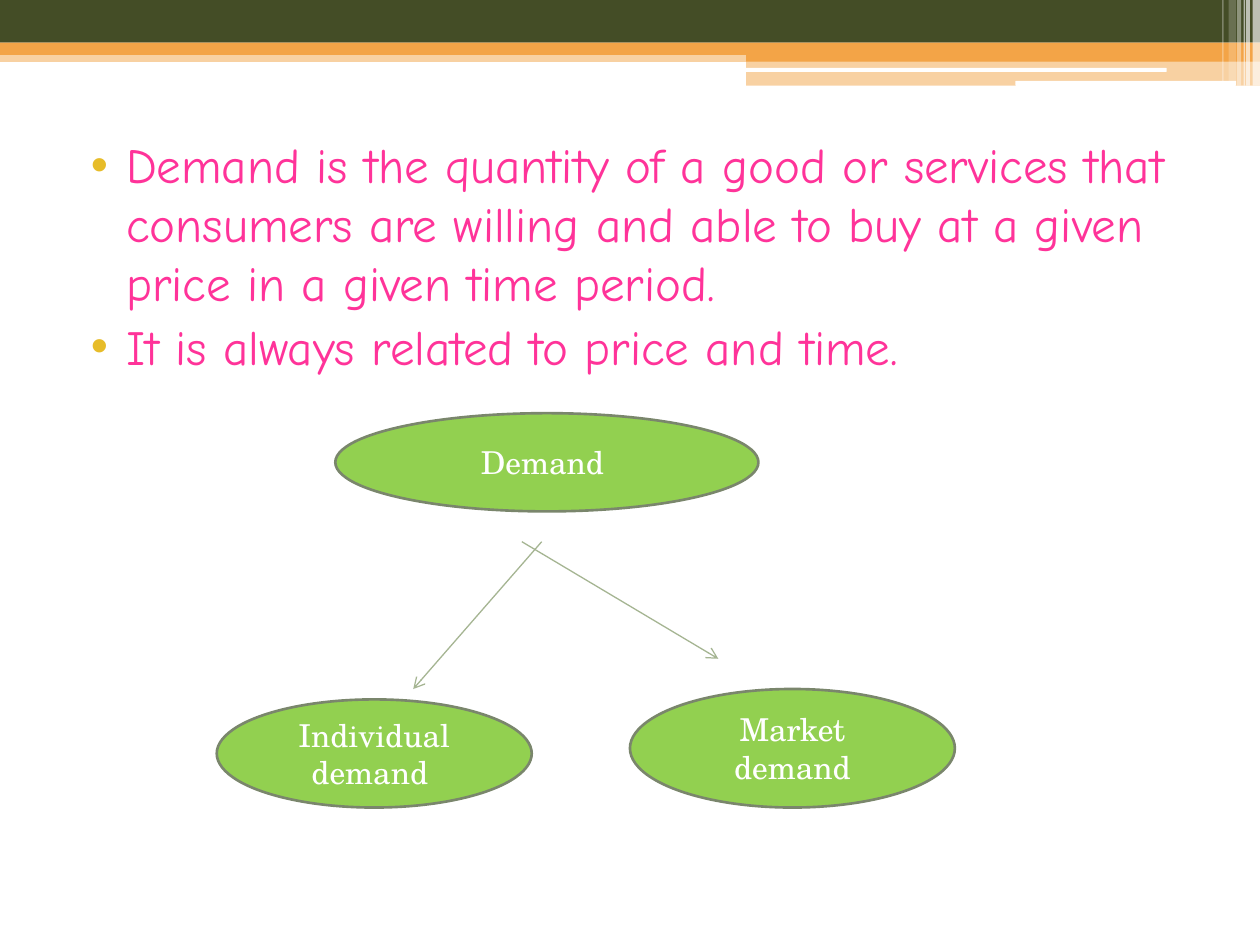
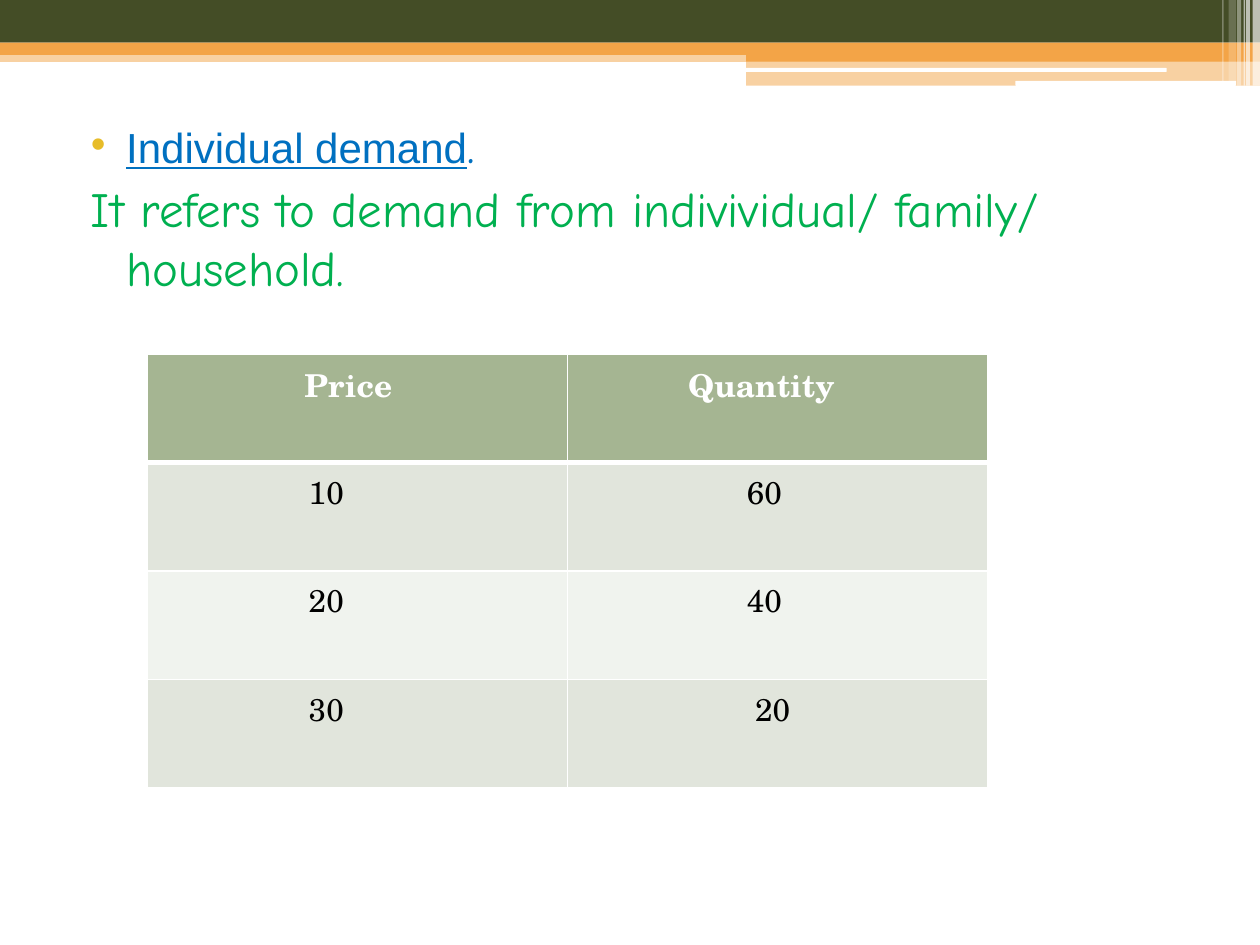
from lxml.etree import SubElement
from pptx import Presentation
from pptx.dml.color import RGBColor
from pptx.enum.shapes import MSO_CONNECTOR, MSO_SHAPE
from pptx.enum.text import MSO_ANCHOR, PP_ALIGN
from pptx.oxml.ns import qn
from pptx.util import Cm, Pt

COLORS = {
    "olive": "444D26", "orange": "F3A447", "white": "FFFFFF", "black": "000000",
    "bullet": "E7BC29", "pink": "FF3399", "blue": "0070C0", "green": "00B050",
    "lime": "92D050", "outline": "7A866C", "sage": "A5B592",
    "row_dark": "E1E5DC", "row_light": "F0F3EE",
}
HAND, SERIF, SANS = "Comic Neue", "TeX Gyre Schola", "Arial"
SLIDE_W, SLIDE_H = 25.4, 19.05
CONTENT_LAYOUT = 1
HANGING = 0.71


def rgb(name):
    return RGBColor.from_string(COLORS[name])


def add_text(p, text, font=SERIF, size=18, color="white", bold=False, underline=False):
    r = p.add_run()
    r.text = text
    r.font.name, r.font.size = font, Pt(size)
    r.font.bold, r.font.underline = bold, underline
    r.font.color.rgb = rgb(color)


def add_filled(slide, kind, box, color, alpha=100):
    sp = slide.shapes.add_shape(kind, *map(Cm, box))
    sp.shadow.inherit = False
    sp.fill.solid()
    sp.fill.fore_color.rgb = rgb(color)
    sp.line.fill.background()
    if alpha < 100:
        clr = sp.fill._xPr.find(f"{qn('a:solidFill')}/{qn('a:srgbClr')}")
        SubElement(clr, qn("a:alpha"), val=str(alpha * 1000))
    return sp


def draw_header(slide, width=SLIDE_W):
    """Draw the top bands, their white slits and the fading stripes at the right."""
    wing = 10.36
    for left, top, height, color, alpha in (
        (0, 1.02, 0.23, "orange", 50),
        (0, 0, 0.86, "olive", 100),
        (0, 0.86, 0.25, "orange", 100),
        (width - wing, 0.99, 0.25, "orange", 100),
        (width - wing, 1.22, 0.51, "orange", 50),
    ):
        box = (left, top, width - left, height)
        add_filled(slide, MSO_SHAPE.RECTANGLE, box, color, alpha)
    for slit in ((width - 10.39, 1.37, 8.51, 0.08), (width - 4.93, 1.63, 4.45, 0.1)):
        add_filled(slide, MSO_SHAPE.ROUNDED_RECTANGLE, slit, "white")
    for from_right, stripe_w, height, alpha in (
        (0.15, 0.15, 1.73, 65), (0.28, 0.08, 1.73, 65), (0.33, 0.03, 1.73, 60),
        (0.46, 0.08, 1.73, 40), (0.63, 0.15, 1.63, 20), (0.76, 0.03, 1.63, 30),
    ):
        box = (width - from_right, 0, stripe_w, height)
        add_filled(slide, MSO_SHAPE.RECTANGLE, box, "white", alpha)


def format_item(p, bullet):
    """Give a paragraph its hanging indent, with or without a bullet."""
    p.space_before = Pt(3)
    pPr = p._p.get_or_add_pPr()
    pPr.set("marL", str(Cm(1.02)))
    pPr.set("indent", str(-Cm(HANGING)))
    if bullet:
        clr = SubElement(pPr, qn("a:buClr"))
        SubElement(clr, qn("a:srgbClr"), val=COLORS["bullet"])
        SubElement(pPr, qn("a:buFont"), typeface=SANS)
        SubElement(pPr, qn("a:buChar"), char="•")
    else:
        SubElement(pPr, qn("a:buNone"))


def fill_body(slide, box, items):
    """Fill the body with items, each a bullet flag and its (text, format) runs."""
    body = slide.placeholders[1]
    body.left, body.top, body.width, body.height = map(Cm, box)
    tf = body.text_frame
    tf.word_wrap = True
    tf.vertical_anchor = MSO_ANCHOR.TOP
    for i, (bullet, runs) in enumerate(items):
        p = tf.add_paragraph() if i else tf.paragraphs[0]
        format_item(p, bullet)
        for text, style in runs:
            add_text(p, text, **style)


def add_ellipse(slide, box, text):
    sp = add_filled(slide, MSO_SHAPE.OVAL, box, "lime")
    sp.line.color.rgb = rgb("outline")
    sp.line.width = Pt(1.5)
    tf = sp.text_frame
    tf.word_wrap = True
    tf.vertical_anchor = MSO_ANCHOR.MIDDLE
    p = tf.paragraphs[0]
    p.alignment = PP_ALIGN.CENTER
    add_text(p, text)


def add_arrow(slide, x1, y1, x2, y2):
    line = slide.shapes.add_connector(MSO_CONNECTOR.STRAIGHT, *map(Cm, (x1, y1, x2, y2)))
    line.line.color.rgb = rgb("sage")
    line.line.width = Pt(0.75)
    SubElement(line.line._get_or_add_ln(), qn("a:tailEnd"), type="arrow")
    SubElement(line._element.spPr, qn("a:effectLst"))


def draw_demand_tree(slide, left, top):
    for x, y, w, h, text in (
        (2.39, 0, 8.53, 1.98, "Demand "),
        (0, 5.77, 6.35, 2.18, "Individual demand "),
        (8.33, 5.56, 6.55, 2.39, "Market demand"),
    ):
        add_ellipse(slide, (left + x, top + y, w, h), text)
    for x1, y1, x2, y2 in ((6.55, 2.59, 3.96, 5.56), (6.15, 2.59, 10.11, 4.95)):
        add_arrow(slide, left + x1, top + y1, left + x2, top + y2)


def set_borders(cell, **widths):
    """Draw white cell borders; widths in points by side (L, R, T, B)."""
    tcPr = cell._tc.get_or_add_tcPr()
    for side, width in widths.items():
        ln = SubElement(tcPr, qn(f"a:ln{side}"), w=str(Pt(width)))
        fill = SubElement(ln, qn("a:solidFill"))
        SubElement(fill, qn("a:srgbClr"), val=COLORS["white"])


def draw_schedule(slide, box, rows):
    """Draw the demand table; each cell is a text and its left indent."""
    table = slide.shapes.add_table(len(rows), len(rows[0]), *map(Cm, box)).table
    for i, row in enumerate(rows):
        header = i == 0
        fill = "sage" if header else ("row_light", "row_dark")[i % 2]
        for j, (text, indent) in enumerate(row):
            cell = table.cell(i, j)
            set_borders(cell, L=1, R=1, T=3 if i == 1 else 1, B=3 if header else 1)
            cell.fill.solid()
            cell.fill.fore_color.rgb = rgb(fill)
            p = cell.text_frame.paragraphs[0]
            p._p.get_or_add_pPr().set("marL", str(Cm(indent)))
            add_text(p, text, color="white" if header else "black", bold=header)


def new_slide(prs):
    slide = prs.slides.add_slide(prs.slide_layouts[CONTENT_LAYOUT])
    title = slide.shapes.title._element
    title.getparent().remove(title)
    draw_header(slide)
    return slide


def build_definition_slide(prs):
    slide = new_slide(prs)
    pink = dict(font=HAND, size=28, color="pink")
    fill_body(slide, (1.27, 2.59, 22.86, 15.67), [
        (True, [("Demand is the quantity of a good or services that consumers are "
                 "willing and able to buy at a given price in a given time period.", pink)]),
        (True, [("It is always related to price and time.", pink)]),
    ])
    draw_demand_tree(slide, 4.37, 8.33)


def build_individual_slide(prs):
    slide = new_slide(prs)
    fill_body(slide, (1.27, 2.18, 22.86, 16.08), [
        (True, [("Individual demand", dict(font=SANS, size=24, color="blue", underline=True)),
                (".", dict(font=HAND, size=28, color="blue"))]),
        (False, [("It refers to demand from indivividual/ family/ household.",
                  dict(font=HAND, size=28, color="green"))]),
    ])
    draw_schedule(slide, (2.97, 7.14, 16.94, 8.74), [
        [("Price", 2.91), ("Quantity", 2.18)],
        [("10", 3), ("60", 3.36)],
        [("20", 3), ("40", 3.36)],
        [("30", 3), ("20", 3.53)],
    ])


def main():
    prs = Presentation()
    prs.slide_width, prs.slide_height = Cm(SLIDE_W), Cm(SLIDE_H)
    build_definition_slide(prs)
    build_individual_slide(prs)
    prs.save("out.pptx")


if __name__ == "__main__":
    main()
